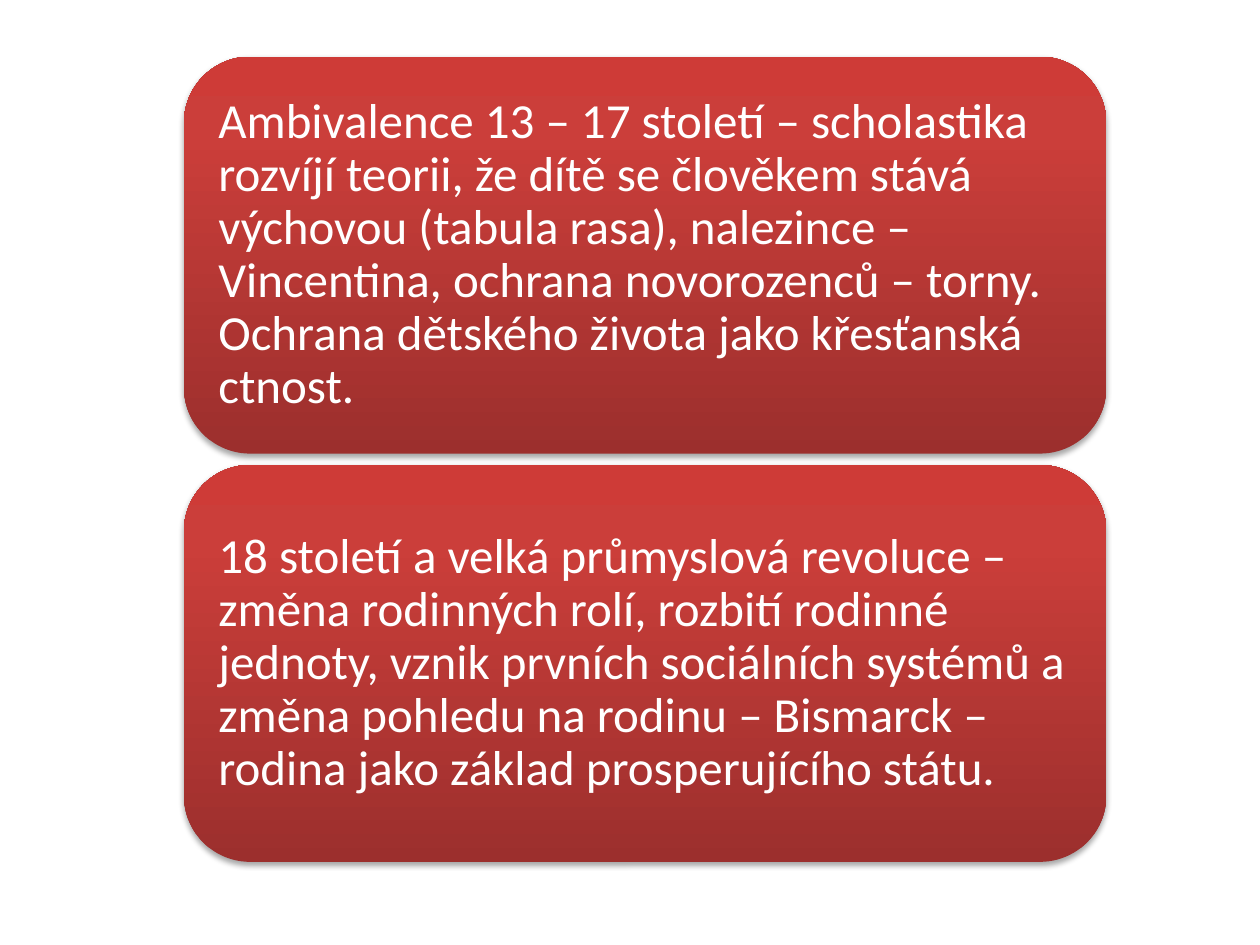
"""Build a slide with two stacked red panels on the history of childhood and family."""
import copy

import pptx
import pptx.dml.color
import pptx.enum.shapes
import pptx.enum.text
import pptx.oxml
import pptx.oxml.ns
import pptx.util
from pptx.util import Inches

PANEL_TEXTS = [
    "Ambivalence 13 – 17 století – scholastika rozvíjí teorii, že dítě se člověkem stává "
    "výchovou (tabula rasa), nalezince – Vincentina, ochrana novorozenců – torny. "
    "Ochrana dětského života jako křesťanská ctnost.",
    "18 století a velká průmyslová revoluce – změna rodinných rolí, rozbití rodinné "
    "jednoty, vznik prvních sociálních systémů a změna pohledu na rodinu – Bismarck – "
    "rodina jako základ prosperujícího státu.",
]
GRADIENT = [(0, "9C2F2D"), (0.8, "CB3E3A"), (1, "CE3B37")]
SHADOW = (
    f'<a:outerShdw {pptx.oxml.ns.nsdecls("a")} blurRad="{pptx.util.Pt(3.1)}" '
    f'dist="{pptx.util.Pt(1.8)}" dir="5400000" rotWithShape="0">'
    '<a:srgbClr val="000000"><a:alpha val="35000"/></a:srgbClr></a:outerShdw>'
)
LEFT, TOP, WIDTH, HEIGHT, PITCH = 1.46, 0.45, 7.32, 3.15, 3.24


def color(value):
    return pptx.dml.color.RGBColor.from_string(value)


def write_text(shape, text, *, size, font, fill, inset, line_spacing):
    frame = shape.text_frame
    frame.word_wrap = True
    frame.vertical_anchor = pptx.enum.text.MSO_ANCHOR.MIDDLE
    frame.margin_left = frame.margin_right = Inches(inset)
    frame.margin_top = frame.margin_bottom = Inches(inset)
    paragraph = frame.paragraphs[0]
    paragraph.alignment = pptx.enum.text.PP_ALIGN.LEFT
    paragraph.line_spacing = line_spacing
    run = paragraph.add_run()
    run.text = text
    run.font.size = pptx.util.Pt(size)
    run.font.name = font
    run.font.color.rgb = color(fill)


presentation = pptx.Presentation()
presentation.slide_width = Inches(10)
presentation.slide_height = Inches(7.5)
slide = presentation.slides.add_slide(presentation.slide_layouts[6])

for index, text in enumerate(PANEL_TEXTS):
    panel = slide.shapes.add_shape(
        pptx.enum.shapes.MSO_SHAPE.ROUNDED_RECTANGLE,
        Inches(LEFT), Inches(TOP + index * PITCH), Inches(WIDTH), Inches(HEIGHT),
    )
    panel.line.fill.background()
    panel.fill.gradient()
    panel.fill.gradient_angle = 90
    stop_list = panel._element.spPr.find(".//" + pptx.oxml.ns.qn("a:gsLst"))
    stop_list.append(copy.deepcopy(stop_list[-1]))
    for stop, (position, value) in zip(panel.fill.gradient_stops, GRADIENT):
        stop.position = position
        stop.color.rgb = color(value)

    panel.shadow.inherit = False
    effects = panel._element.spPr.find(pptx.oxml.ns.qn("a:effectLst"))
    effects.append(pptx.oxml.parse_xml(SHADOW))

    write_text(panel, text, size=28, font="Calibri", fill="FFFFFF", inset=0.12, line_spacing=0.9)

presentation.save("out.pptx")
